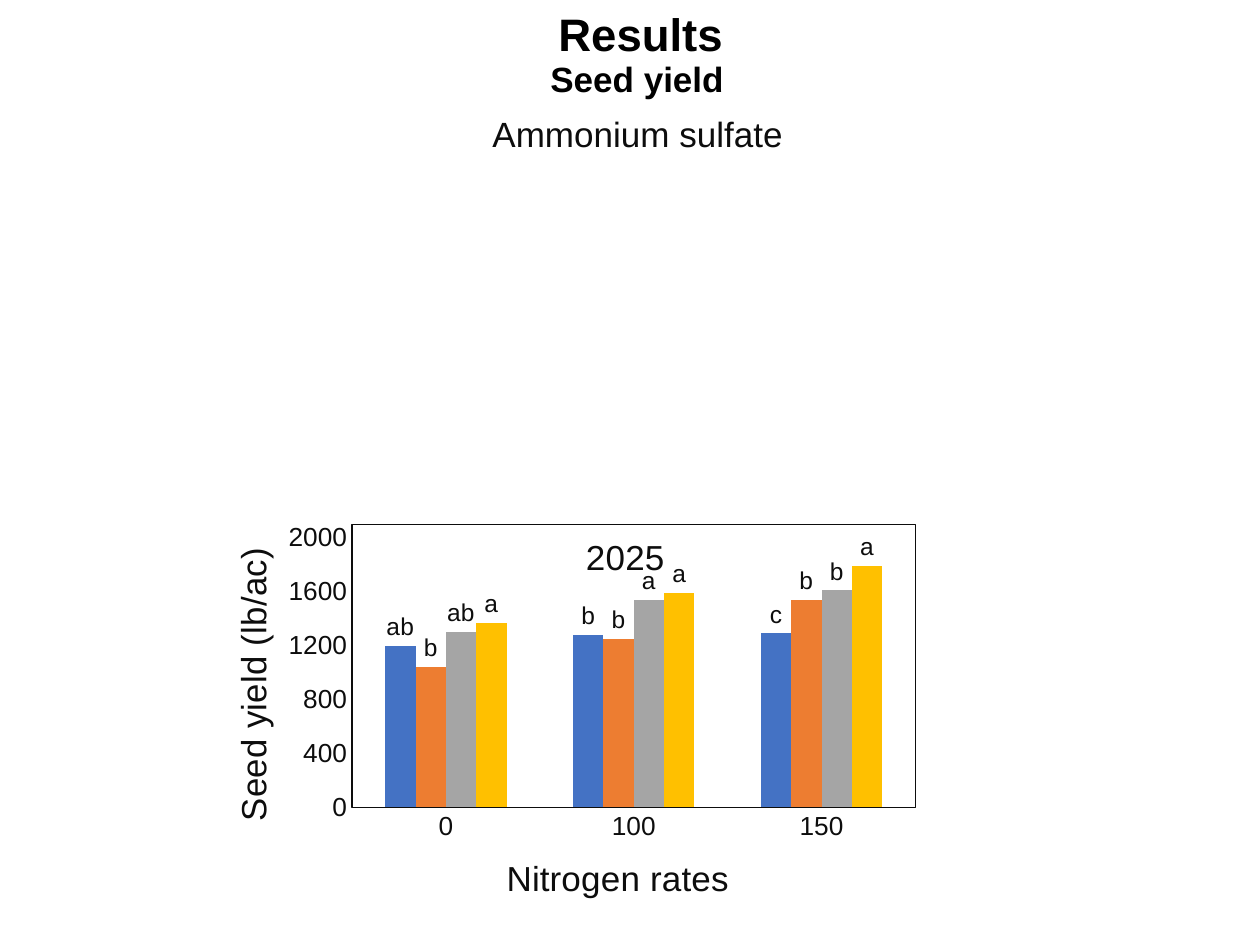
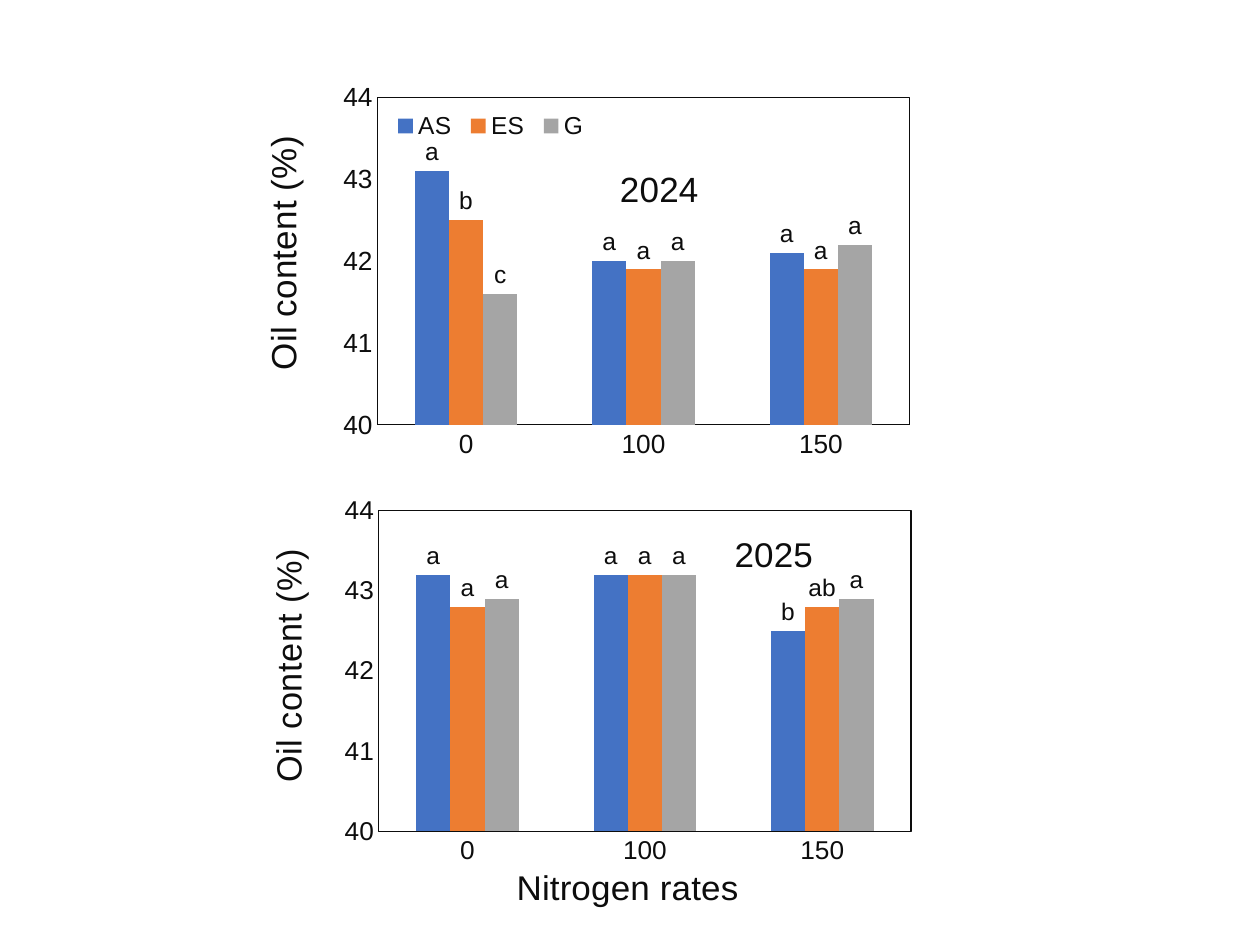
"""Build two slides of clustered column charts on seed yield and oil content."""
from lxml import etree
from pptx import Presentation
from pptx import util as u
from pptx.chart import data as chart_data
from pptx.dml.color import RGBColor
from pptx.enum import chart as ch, text as tx
from pptx.oxml import ns

BLACK = RGBColor(0, 0, 0)
INK = RGBColor(0x0D, 0x0D, 0x0D)
SERIES_COLORS = [RGBColor(0x44, 0x72, 0xC4), RGBColor(0xED, 0x7D, 0x31),
                 RGBColor(0xA5, 0xA5, 0xA5), RGBColor(0xFF, 0xC0, 0x00)]
FONT = "Arial"
NITROGEN_RATES = ["0", "100", "150"]


def write(frame, text, size=20, color=INK, bold=False, align=None):
    paragraph = frame.paragraphs[0]
    paragraph.alignment = align
    run = paragraph.add_run()
    run.text = text
    run.font.name, run.font.size, run.font.bold = FONT, u.Pt(size), bold
    run.font.color.rgb = color


def place(element, index, inner=False, **fractions):
    for old in element.findall(ns.qn("c:layout")):
        element.remove(old)
    layout = etree.Element(ns.qn("c:layout"))
    manual = etree.SubElement(layout, ns.qn("c:manualLayout"))
    if inner:
        etree.SubElement(manual, ns.qn("c:layoutTarget")).set("val", "inner")
    for side in ("x", "y"):
        etree.SubElement(manual, ns.qn(f"c:{side}Mode")).set("val", "edge")
    for side, fraction in fractions.items():
        etree.SubElement(manual, ns.qn(f"c:{side}")).set("val", f"{fraction:.4f}")
    element.insert(index, layout)


presentation = Presentation()
presentation.slide_width, presentation.slide_height = u.Inches(10), u.Inches(7.5)
yield_slide = presentation.slides.add_slide(presentation.slide_layouts[5])
oil_slide = presentation.slides.add_slide(presentation.slide_layouts[6])

title = yield_slide.shapes.title
title.left, title.top = u.Inches(2.71), u.Inches(0)
title.width, title.height = u.Inches(4.75), u.Inches(0.54)
title.text_frame.vertical_anchor = tx.MSO_ANCHOR.TOP
write(title.text_frame, "Results", size=26, color=BLACK, bold=True, align=tx.PP_ALIGN.CENTER)

for words, left, top, width, color, bold in [
        ("Ammonium sulfate", 3.81, 0.84, 2.56, INK, False),
        ("Seed yield", 4.27, 0.41, 1.93, BLACK, True)]:
    box = yield_slide.shapes.add_textbox(u.Inches(left), u.Inches(top), u.Inches(width), u.Inches(0.44))
    box.text_frame.word_wrap = True
    write(box.text_frame, words, color=color, bold=bold)

charts = [
    dict(slide=yield_slide, box=(1.78, 3.57, 5.57, 3.65), plot=(0.182, 0.163, 0.803, 0.621),
         year=("2025", 4.6, 4.2), value_title=("Seed yield (lb/ac)", 1.75, 4.32),
         rate_title=("Nitrogen rates", 3.97, 6.77), scale=(0, 2100, 400), legend=None,
         series=[("Series 1", (1200, 1280, 1290), ("ab", "b", "c")),
                 ("Series 2", (1040, 1250, 1540), ("b", "b", "b")),
                 ("Series 3", (1300, 1540, 1610), ("ab", "a", "b")),
                 ("Series 4", (1370, 1590, 1790), ("a", "a", "a"))]),
    dict(slide=oil_slide, box=(2.06, 3.94, 5.32, 3.35), plot=(0.178, 0.025, 0.794, 0.776),
         year=("2025", 5.78, 4.15), value_title=("Oil content (%)", 2.03, 4.32),
         rate_title=("Nitrogen rates", 4.05, 6.85), scale=(40, 44, 1), legend=None,
         series=[("Series 1", (43.2, 43.2, 42.5), ("a", "a", "b")),
                 ("Series 2", (42.8, 43.2, 42.8), ("a", "a", "ab")),
                 ("Series 3", (42.9, 43.2, 42.9), ("a", "a", "a"))]),
    dict(slide=oil_slide, box=(1.99, 0.65, 5.32, 3.14), plot=(0.189, 0.039, 0.794, 0.828),
         year=("2024", 4.87, 1.27), value_title=("Oil content (%)", 2.02, 1.03),
         rate_title=None, scale=(40, 44, 1), legend=(3.07, 0.84, 1.65, 0.32),
         series=[("AS", (43.1, 42.0, 42.1), ("a", "a", "a")),
                 ("ES", (42.5, 41.9, 41.9), ("b", "a", "a")),
                 ("G", (41.6, 42.0, 42.2), ("c", "a", "a"))]),
]

for item in charts:
    left, top, width, height = item["box"]
    data = chart_data.CategoryChartData(number_format="General")
    data.categories = NITROGEN_RATES
    for name, values, letters in item["series"]:
        data.add_series(name, values)
    chart = item["slide"].shapes.add_chart(
        ch.XL_CHART_TYPE.COLUMN_CLUSTERED, *map(u.Inches, item["box"]), data).chart
    chart.font.name, chart.font.size, chart.font.color.rgb = FONT, u.Pt(15), INK

    plot = chart.plots[0]
    plot.gap_width, plot.overlap, plot.vary_by_categories = 219, 0, False
    for series, color, (name, values, letters) in zip(plot.series, SERIES_COLORS, item["series"]):
        series.format.fill.solid()
        series.format.fill.fore_color.rgb = color
        for index, letter in enumerate(letters):
            label = series.points[index].data_label
            write(label.text_frame, letter, size=14)
            label.position = ch.XL_LABEL_POSITION.OUTSIDE_END

    rate_axis, value_axis = chart.category_axis, chart.value_axis
    for axis in (rate_axis, value_axis):
        axis.has_major_gridlines = False
        axis.major_tick_mark = axis.minor_tick_mark = ch.XL_TICK_MARK.NONE
    rate_axis.format.line.color.rgb = INK
    rate_axis.format.line.width = u.Pt(0.75)
    value_axis.format.line.fill.background()
    value_axis.minimum_scale, value_axis.maximum_scale, value_axis.major_unit = item["scale"]

    chart.has_title = True
    chart.chart_title.include_in_layout = False
    titles = [(chart.chart_title, item["year"]), (value_axis.axis_title, item["value_title"])]
    if item["rate_title"]:
        titles.append((rate_axis.axis_title, item["rate_title"]))
    for chart_title, (words, title_left, title_top) in titles:
        write(chart_title.text_frame, words)
        place(chart_title._element, 1, x=(title_left - left) / width, y=(title_top - top) / height)
    turned = value_axis.axis_title._element.find(".//" + ns.qn("a:bodyPr"))
    turned.set("rot", "-5400000")
    turned.set("vert", "horz")

    chart.has_legend = item["legend"] is not None
    if chart.has_legend:
        chart.legend.position = ch.XL_LEGEND_POSITION.BOTTOM
        chart.legend.include_in_layout = False
        chart.legend.font.name, chart.legend.font.size = FONT, u.Pt(14)
        chart.legend.font.color.rgb = INK
        key_left, key_top, key_width, key_height = item["legend"]
        place(chart.legend._element, 1, x=(key_left - left) / width, y=(key_top - top) / height,
              w=key_width / width, h=key_height / height)

    plot_area = chart._chartSpace.chart.plotArea
    place(plot_area, 0, inner=True, **dict(zip("xywh", item["plot"])))
    frame = etree.SubElement(plot_area, ns.qn("c:spPr"))
    etree.SubElement(frame, ns.qn("a:noFill"))
    border = etree.SubElement(frame, ns.qn("a:ln"), w=str(u.Pt(0.75)))
    fill = etree.SubElement(border, ns.qn("a:solidFill"))
    etree.SubElement(fill, ns.qn("a:srgbClr"), val=str(INK))

presentation.save("out.pptx")
